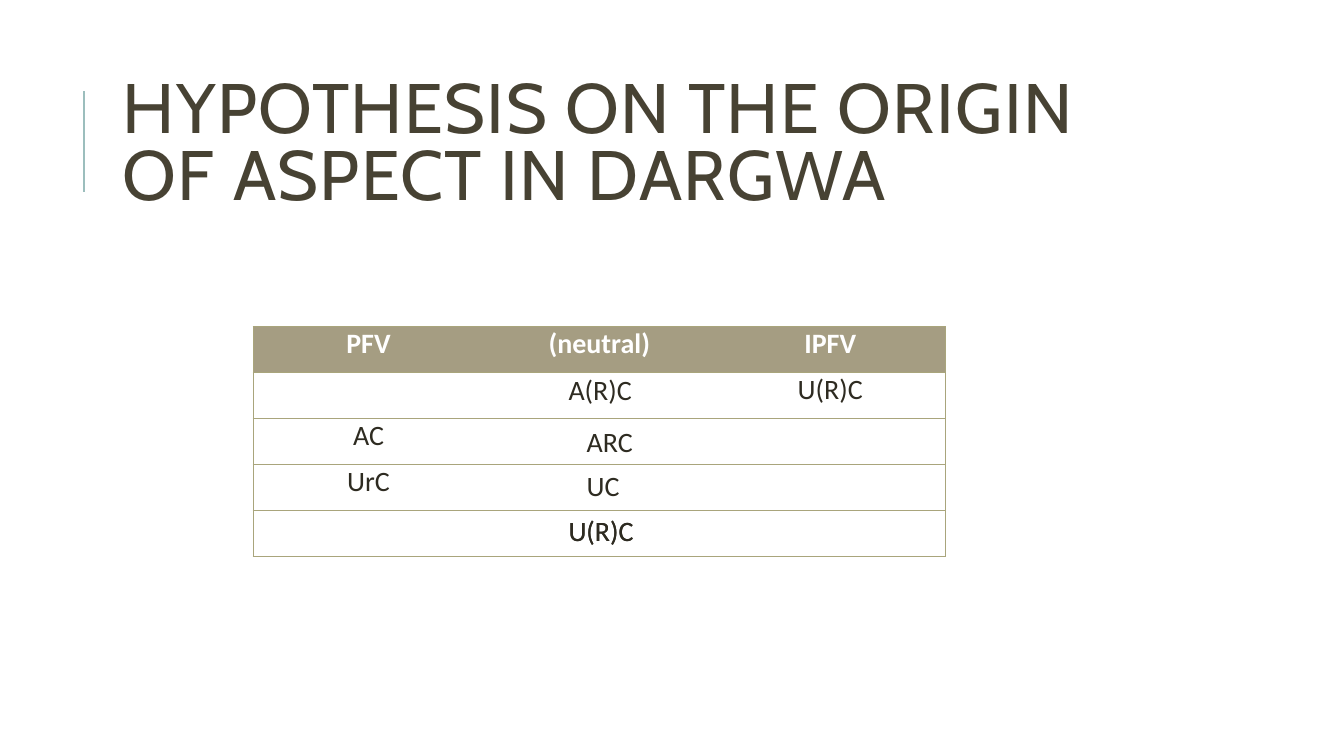
from pptx import Presentation
from pptx.dml.color import RGBColor
from pptx.enum.shapes import MSO_CONNECTOR
from pptx.enum.text import MSO_ANCHOR, PP_ALIGN
from pptx.oxml.ns import qn
from pptx.util import Inches, Pt
from lxml.etree import SubElement

THEME = {
    "title": {"name": "Cabin", "size": Pt(50), "color": "474233"},
    "header": {"name": "Calibri", "size": Pt(20), "bold": True, "color": "FFFFFF"},
    "body": {"name": "Calibri", "size": Pt(20), "bold": False, "color": "2E2B21"},
    "accent": "9CBEBD",
    "header_fill": "A59D82",
    "border": "A9A57C",
}


def write(para, text, style):
    span = para.add_run()
    span.text = text
    for key, value in THEME[style].items():
        if key == "color":
            span.font.color.rgb = RGBColor.from_string(value)
        else:
            setattr(span.font, key, value)
    return span


def add_border(cell, side, visible):
    line = SubElement(cell._tc.get_or_add_tcPr(), qn(f"a:ln{side}"), w=str(Pt(0.75)))
    if visible:
        fill = SubElement(line, qn("a:solidFill"))
        SubElement(fill, qn("a:srgbClr"), val=THEME["border"])
    else:
        SubElement(line, qn("a:noFill"))


deck = Presentation()
deck.slide_width = Inches(13.33)
deck.slide_height = Inches(7.5)
page = deck.slides.add_slide(deck.slide_layouts[6])

accent = page.shapes.add_connector(
    MSO_CONNECTOR.STRAIGHT, Inches(0.83), Inches(1.9), Inches(0.83), Inches(0.9)
)
accent.line.color.rgb = RGBColor.from_string(THEME["accent"])
accent.line.width = Pt(1.5)
SubElement(accent._element.spPr, qn("a:effectLst"))

title = page.shapes.add_textbox(Inches(1.12), Inches(0.64), Inches(10.63), Inches(1.64))
title.text_frame.word_wrap = True
title.text_frame.vertical_anchor = MSO_ANCHOR.MIDDLE
title_para = title.text_frame.paragraphs[0]
title_para.line_spacing = 0.8
title_span = write(title_para, "HYPOTHESIS ON THE ORIGIN OF ASPECT IN DARGWA", "title")
title_span.font._element.set("spc", "100")

ASPECTS = [
    ["PFV", "(neutral)", "IPFV"],
    ["", "", "U(R)C"],
    ["AC", "", ""],
    ["UrC", "", ""],
    ["", "", ""],
]
row_count, column_count = len(ASPECTS), len(ASPECTS[0])
table = page.shapes.add_table(
    row_count, column_count, Inches(2.51), Inches(3.24), Inches(6.87), Inches(2.28)
).table
table.first_row = False
table.horz_banding = False

for row_index, row in enumerate(ASPECTS):
    for column_index, text in enumerate(row):
        cell = table.cell(row_index, column_index)
        cell.margin_left = cell.margin_right = Inches(0.07)
        cell.margin_top = cell.margin_bottom = 0
        add_border(cell, "L", column_index == 0)
        add_border(cell, "R", column_index == column_count - 1)
        add_border(cell, "T", True)
        add_border(cell, "B", True)
        if row_index == 0:
            cell.fill.solid()
            cell.fill.fore_color.rgb = RGBColor.from_string(THEME["header_fill"])
        else:
            cell.fill.background()
        para = cell.text_frame.paragraphs[0]
        para.alignment = PP_ALIGN.CENTER
        if text:
            write(para, text, "body" if row_index else "header")

NEUTRAL_FORMS = [
    ("A(R)C", 5.54, 3.65, 0.99),
    ("UC", 5.72, 4.6, 0.81),
    ("U(R)C", 5.54, 5.05, 0.99),
    ("U(R)C", 5.54, 5.05, 1.02),
    ("ARC", 5.72, 4.16, 0.81),
]
for text, left, top, width in NEUTRAL_FORMS:
    box = page.shapes.add_textbox(Inches(left), Inches(top), Inches(width), Inches(0.44))
    box.text_frame.word_wrap = True
    write(box.text_frame.paragraphs[0], text, "body")

deck.save("out.pptx")
